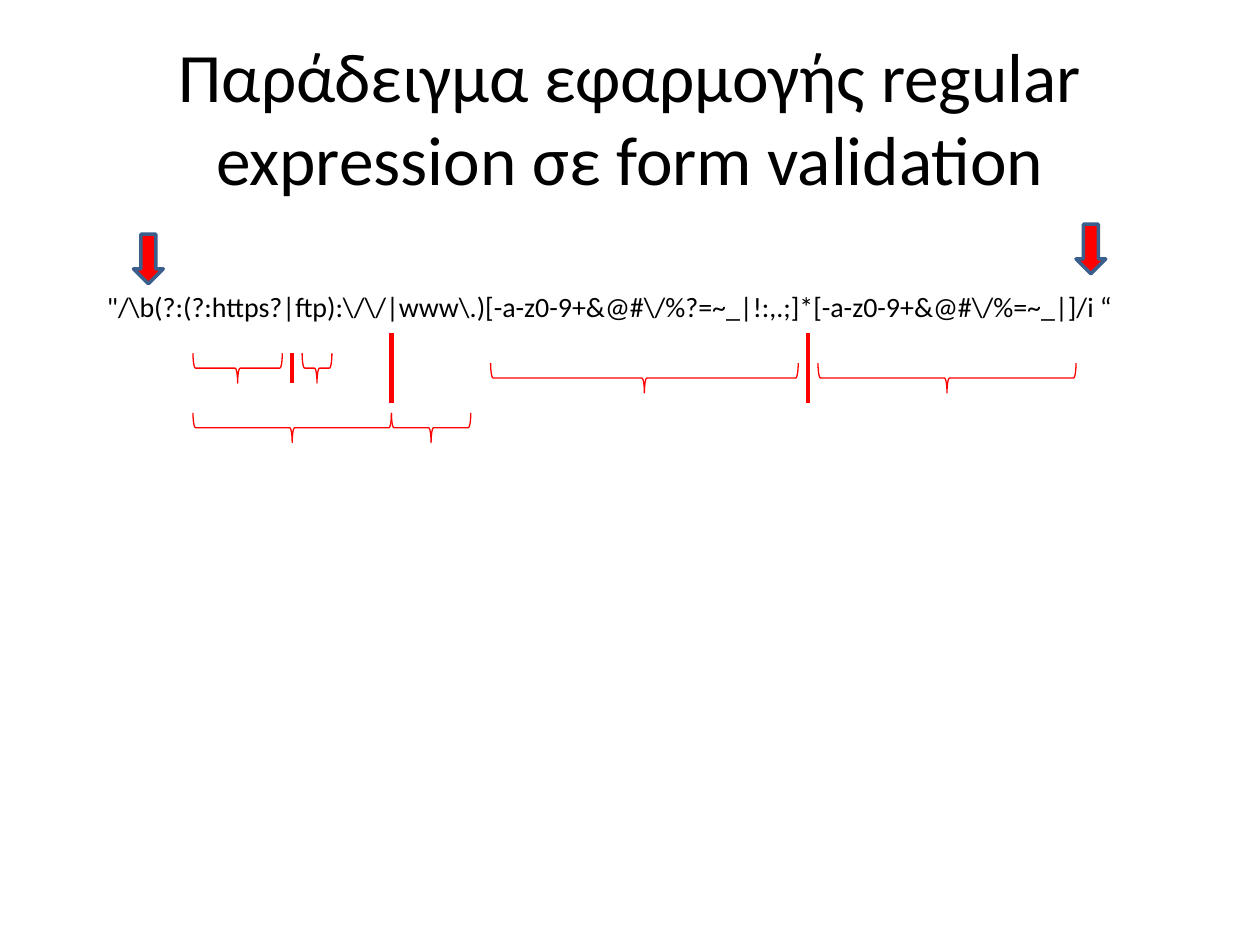
import pptx
import pptx.dml.color
import pptx.enum.shapes
import pptx.enum.text
import pptx.oxml.xmlchemy
import pptx.util

WIDTH, HEIGHT = pptx.util.Inches(10), pptx.util.Inches(7.5)
CELL = pptx.util.Mm(2)
COLS, ROWS = 98, 22
RED, BLUE, BLACK = "FF0000", "3A5F8C", "000000"
SHAPE = pptx.enum.shapes.MSO_SHAPE

TITLE = "Παράδειγμα εφαρμογής regular expression σε form validation"
PATTERN = r'"/\b(?:(?:https?|ftp):\/\/|www\.)[-a-z0-9+&@#\/%?=~_|!:,.;]*[-a-z0-9+&@#\/%=~_|]/i “'
DELIMITER_ARROWS = [(0, 1), (95, 0)]
ALTERNATIVE_BARS = [(26, 11, 18), (16, 13, 16), (68, 11, 18)]
GROUP_BRACES = [(6, 13, 9), (17, 13, 3), (6, 19, 20), (26, 19, 8), (36, 14, 31), (69, 14, 26)]


def color(value):
    return pptx.dml.color.RGBColor.from_string(value)


def set_line(sp, value, width):
    sp.line.color.rgb = color(value)
    sp.line.width = pptx.util.Pt(width)


def set_text(sp, text, size, anchor):
    tf = sp.text_frame
    tf.text = text
    tf.vertical_anchor = anchor
    font = tf.paragraphs[0].runs[0].font
    font.name = "Calibri"
    font.size = pptx.util.Pt(size)
    font.color.rgb = color(BLACK)
    return tf


def place_title(s, left, top, width, height):
    sp = s.shapes.title
    sp.left, sp.top, sp.width, sp.height = left, top, width, height
    tf = set_text(sp, TITLE, 39.6, pptx.enum.text.MSO_ANCHOR.MIDDLE)
    tf.auto_size = pptx.enum.text.MSO_AUTO_SIZE.NONE
    tf.paragraphs[0].alignment = pptx.enum.text.PP_ALIGN.CENTER


def place_pattern(s, left, top, width, height):
    sp = s.shapes.add_textbox(left, top, width, height)
    tf = set_text(sp, PATTERN, 16, pptx.enum.text.MSO_ANCHOR.TOP)
    tf.word_wrap = False
    tf.auto_size = pptx.enum.text.MSO_AUTO_SIZE.SHAPE_TO_FIT_TEXT


def add_bar(s, x, top, bottom):
    bar = s.shapes.add_connector(pptx.enum.shapes.MSO_CONNECTOR.STRAIGHT, x, top, x, bottom)
    set_line(bar, RED, 2.5)
    bar._element.spPr.append(pptx.oxml.xmlchemy.OxmlElement("a:effectLst"))


def add_brace(s, left, top, width, height):
    shift = (width - height) // 2
    sp = s.shapes.add_shape(SHAPE.LEFT_BRACE, left + shift, top - shift, height, width)
    sp.rotation = 270
    sp.shadow.inherit = False
    sp.fill.background()
    set_line(sp, RED, 0.75)


def add_arrow(s, left, top, width, height):
    sp = s.shapes.add_shape(SHAPE.DOWN_ARROW, left, top, width, height)
    sp.shadow.inherit = False
    sp.fill.solid()
    sp.fill.fore_color.rgb = color(RED)
    set_line(sp, BLUE, 2)


def place_marks(s, left, top, width, height):
    col, row = width / COLS, height / ROWS

    def x(n):
        return round(left + n * col)

    def y(n):
        return round(top + n * row)

    for c, start, end in ALTERNATIVE_BARS:
        add_bar(s, x(c), y(start), y(end))
    for c, r, span in GROUP_BRACES:
        add_brace(s, x(c), y(r), round(span * col), round(3 * row))
    for c, r in DELIMITER_ARROWS:
        add_arrow(s, x(c), y(r), round(3 * col), round(5 * row))


def main():
    prs = pptx.Presentation()
    prs.slide_width, prs.slide_height = WIDTH, HEIGHT
    s = prs.slides.add_slide(prs.slide_layouts[5])
    place_title(s, int(WIDTH * 0.05), int(HEIGHT * 0.04), int(WIDTH * 0.9), HEIGHT // 6)
    place_pattern(s, int(WIDTH * 0.075), int(HEIGHT * 0.3), int(WIDTH * 0.83), int(HEIGHT * 0.085))
    place_marks(s, pptx.util.Inches(1.06), pptx.util.Inches(1.78), COLS * CELL, ROWS * CELL)
    prs.save("out.pptx")


if __name__ == "__main__":
    main()
